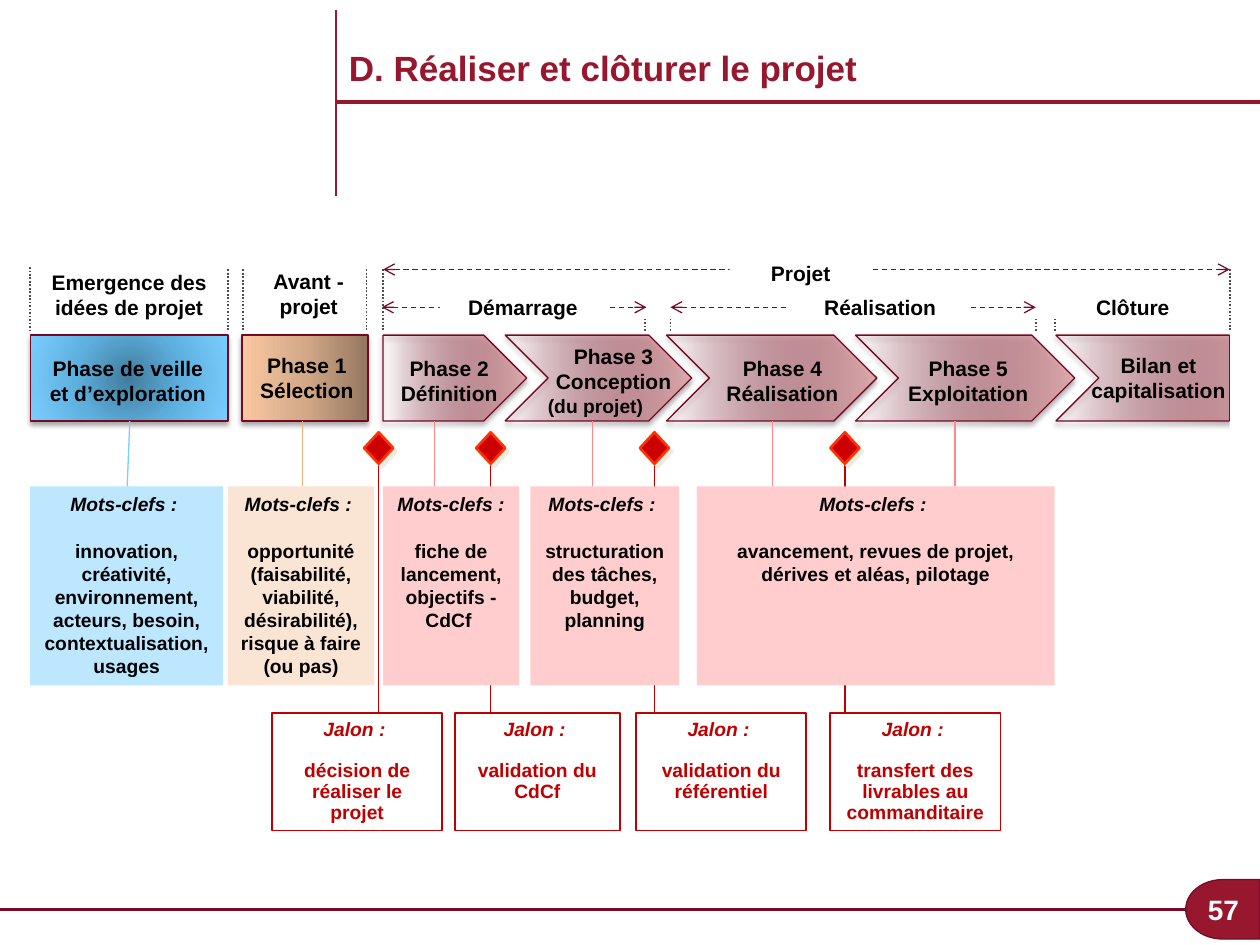
from lxml.etree import SubElement
from pptx import Presentation
from pptx.dml.color import RGBColor
from pptx.enum.dml import MSO_LINE
from pptx.enum.shapes import MSO_CONNECTOR, MSO_SHAPE
from pptx.enum.text import MSO_ANCHOR, PP_ALIGN
from pptx.oxml import parse_xml
from pptx.oxml.ns import nsdecls, qn
from pptx.util import Pt

COLORS = {
    "white": "FFFFFF", "black": "000000", "burgundy": "96172E", "dark": "780B24",
    "outline": "780822", "dots": "4D4D4D", "milestone": "C00000",
    "diamond": "CC0000", "diamond_edge": "FF3300", "diamond_shadow": "EEECE1",
    "blue_card": "BCE7FF", "orange_card": "FAE4D3", "pink_card": "FFCDCD",
    "blue_lead": "7ACEFF", "orange_lead": "EFAE7B", "pink_lead": "FF8989",
}
BLUE = ([(0, "427C9D", 100), (50, "5EB0DF", 100), (100, "7ACEFF", 100)], None)
ORANGE = ([(0, "947760", 100), (50, "D3A988", 100), (100, "FAC8A1", 100)], 180)
PINK = ([(0, "83001E", 0), (100, "DCACAE", 100)], 0)
PHASE_SHADOW = (COLORS["black"], 35, 3.1, 1.8, 90)
DIAMOND_SHADOW = (COLORS["diamond_shadow"], 100, 0, 2.8, 45)


def rgb(name):
    """Return the palette colour called name."""
    return RGBColor.from_string(COLORS[name])


def add_line(slide, start, end, color, width=0.75, dash=None, arrows=False):
    """Draw a straight line, optionally dashed and with arrows at both ends."""
    points = [Pt(value) for value in (*start, *end)]
    connector = slide.shapes.add_connector(MSO_CONNECTOR.STRAIGHT, *points)
    connector.line.color.rgb = rgb(color)
    connector.line.width = Pt(width)
    if dash:
        connector.line.dash_style = dash
    if arrows:
        for tag in ("a:headEnd", "a:tailEnd"):
            SubElement(connector.line._get_or_add_ln(), qn(tag), type="arrow")
    SubElement(connector._element.spPr, qn("a:effectLst"))


def add_box(slide, kind, box, fill=None, line=None, width=0.75):
    """Draw a preset shape without shadow."""
    shape = slide.shapes.add_shape(kind, *[Pt(value) for value in box])
    shape.shadow.inherit = False
    if fill:
        shape.fill.solid()
        shape.fill.fore_color.rgb = rgb(fill)
    else:
        shape.fill.background()
    if line:
        shape.line.color.rgb = rgb(line)
        shape.line.width = Pt(width)
    else:
        shape.line.fill.background()
    return shape


def add_shadow(shape, color, opacity, blur, distance, angle):
    """Give a shape an outer shadow."""
    effects = shape._element.spPr.find(qn("a:effectLst"))
    shadow = SubElement(effects, qn("a:outerShdw"), blurRad=str(Pt(blur)), dist=str(Pt(distance)),
                        dir=str(angle * 60000), algn="ctr", rotWithShape="0")
    tint = SubElement(shadow, qn("a:srgbClr"), val=color)
    SubElement(tint, qn("a:alpha"), val=str(opacity * 1000))


def set_gradient(shape, stops, angle):
    """Fill a shape with a linear gradient, or a circular one if angle is None."""
    stop_xml = "".join(
        f'<a:gs pos="{position * 1000}"><a:srgbClr val="{color}">'
        f'<a:alpha val="{opacity * 1000}"/></a:srgbClr></a:gs>'
        for position, color, opacity in stops)
    if angle is None:
        direction = ('<a:path path="circle"><a:fillToRect l="50000" t="50000" '
                     'r="50000" b="50000"/></a:path>')
    else:
        direction = f'<a:lin ang="{angle * 60000}" scaled="0"/>'
    gradient = parse_xml(f'<a:gradFill {nsdecls("a")} rotWithShape="1"><a:gsLst>{stop_xml}'
                         f'</a:gsLst>{direction}</a:gradFill>')
    properties = shape._element.spPr
    properties.replace(properties.find(qn("a:noFill")), gradient)


def write(shape, paragraphs, size=12, color="black", align=PP_ALIGN.CENTER,
          anchor=MSO_ANCHOR.TOP, wrap=True):
    """Write bold paragraphs in a shape and return them."""
    frame = shape.text_frame
    frame.text = "\n".join(paragraphs)
    frame.word_wrap = wrap
    frame.vertical_anchor = anchor
    for paragraph in frame.paragraphs:
        paragraph.alignment = align
        paragraph.font.name = "Arial"
        paragraph.font.size = Pt(size)
        paragraph.font.bold = True
        paragraph.font.color.rgb = rgb(color)
    return frame.paragraphs


def add_text(slide, box, text, **style):
    """Add a text box holding one paragraph."""
    write(slide.shapes.add_textbox(*[Pt(value) for value in box]), [text], **style)


def write_card(shape, heading, body, color, gap, spacing=None):
    """Write an italic heading and a body paragraph under it."""
    first, second = write(shape, [heading, body], size=11, color=color)
    first.font.italic = True
    second.space_before = Pt(gap)
    if spacing:
        first.line_spacing = second.line_spacing = spacing


def build_header(slide, box):
    """Place the title between its two rules."""
    left, top, width, height = box
    title = slide.shapes.title
    title.left, title.top, title.width, title.height = Pt(left), Pt(top + 16.5), Pt(387.4), Pt(31.7)
    write(title, ["D. Réaliser et clôturer le projet"], size=20, color="burgundy",
          align=PP_ALIGN.LEFT, anchor=MSO_ANCHOR.BOTTOM)
    add_line(slide, (left, top + 52.5), (left + width, top + 52.5), "burgundy", 2.25)
    add_line(slide, (left, top), (left, top + height), "burgundy", 1)


def build_footer(slide, box):
    """Place the bottom rule and the page number badge."""
    left, top, width, height = box
    badge = width - 42.5
    add_line(slide, (left, top + height / 2), (left + badge, top + height / 2), "dark", 2)
    shape = add_box(slide, MSO_SHAPE.FLOWCHART_DELAY, (left + badge, top, 42.5, height),
                    "burgundy", "dark")
    shape.rotation = 180
    add_text(slide, (left + width - 172.8, top + 2.5, 167.8, 28.8), "57", size=16,
             color="white", align=PP_ALIGN.RIGHT, anchor=MSO_ANCHOR.MIDDLE)


def build_spans(slide, box):
    """Place the period labels, their arrows and dotted limits."""
    left, top, width, height = box
    for x, start in [(0, 7.2), (113, 8.6), (121.7, 8.6), (192.2, 8.6), (201.6, 8.6), (351.4, 36.7),
                     (365.8, 36.7), (574.6, 36.7), (585.4, 36.7), (width, 8.6)]:
        add_line(slide, (left + x, top + start), (left + x, top + height), "dots", 1,
                 MSO_LINE.ROUND_DOT)
    for start, end, y in [(201.6, width, 8.6), (200.9, 352.1, 30.2), (365.8, 574.6, 30.2)]:
        add_line(slide, (left + start, top + y), (left + end, top + y), "dark",
                 dash=MSO_LINE.DASH, arrows=True)
    for text, x, y, label_width in [("Projet", 399.6, 0, 81.4), ("Démarrage", 234, 19.4, 95),
                                    ("Réalisation", 434.2, 19.4, 103), ("Clôture", 599.8, 19.4, 60.5)]:
        label = add_box(slide, MSO_SHAPE.RECTANGLE, (left + x, top + y, label_width, 21.6), "white")
        write(label, [text])
    add_text(slide, (left + 4.3, top + 5, 104.4, 36), "Emergence des idées de projet")
    add_text(slide, (left + 129.6, top + 4.3, 59, 36), "Avant - projet")


def build_phases(slide, box):
    """Place the chain of phases, the last one cut straight at the right."""
    left, top, width, height = box
    phases = [
        ("Phase de veille et d’exploration", MSO_SHAPE.RECTANGLE, BLUE, 0, 113, 3.6, 7.9, 104.4),
        ("Phase 1 Sélection", MSO_SHAPE.RECTANGLE, ORANGE, 121, 72, 118.1, 6.5, 79.9),
        ("Phase 2 Définition", MSO_SHAPE.PENTAGON, PINK, 201.6, 82.1, 199.4, 7.9, 79.9),
        ("Phase 3 Conception", MSO_SHAPE.CHEVRON, PINK, 271.4, 106.6, 292.3, 1.4, 82.1),
        ("Phase 4 Réalisation", MSO_SHAPE.CHEVRON, PINK, 363.6, 120.2, 388.8, 7.9, 82.1),
        ("Phase 5 Exploitation", MSO_SHAPE.CHEVRON, PINK, 471.6, 125.3, 490.3, 7.9, 91.4),
        ("Bilan et capitalisation", MSO_SHAPE.CHEVRON, PINK, 586.1, 123.8, 598.7, 6.5, 92),
    ]
    for text, kind, gradient, x, phase_width, text_x, text_y, text_width in phases:
        shape = add_box(slide, kind, (left + x, top, phase_width, height), line="outline")
        set_gradient(shape, *gradient)
        add_shadow(shape, *PHASE_SHADOW)
        add_text(slide, (left + text_x, top + text_y, text_width, 36), text)
    add_text(slide, (left + 288.7, top + 30.2, 69, 21), "(du projet)", size=11,
             align=PP_ALIGN.LEFT, wrap=False)
    add_box(slide, MSO_SHAPE.RECTANGLE, (left + width, top - 1, 17.3, 54), "white")
    add_line(slide, (left + width, top), (left + width, top + height), "dark")


def build_milestones(slide, box):
    """Place the milestone diamonds, their stems and their cards."""
    left, top, width, height = box
    card_top = top + 160.6
    for text, diamond_x, x, card_width in [
            ("décision de réaliser le projet", 52.6, 0, 97.2),
            ("validation du CdCf", 116.6, 104.4, 94.3),
            ("validation du référentiel", 210.2, 208.1, 97.2),
            ("transfert des livrables au commanditaire", 319, 319, 97.2)]:
        center = left + diamond_x + 8.3
        add_line(slide, (center, card_top), (center, top + 18), "milestone")
        diamond = add_box(slide, MSO_SHAPE.DIAMOND, (left + diamond_x, top, 16.6, 18),
                          "diamond", "diamond_edge", 1.5)
        add_shadow(diamond, *DIAMOND_SHADOW)
        card = add_box(slide, MSO_SHAPE.RECTANGLE, (left + x, card_top, card_width, height - 160.6),
                       line="milestone", width=1)
        write_card(card, "Jalon : ", text, "milestone", 11.8, 0.9)


def build_keywords(slide, box):
    """Place the keyword cards and the leads up to their phases."""
    left, top, width, height = box
    lead = 37.4
    for text, hue, x, card_width, leads in [
            ("innovation, créativité, environnement, acteurs, besoin, contextualisation, usages",
             "blue", 0, 110.2, [(55.4, 56.9)]),
            ("opportunité (faisabilité, viabilité, désirabilité), risque à faire (ou pas)",
             "orange", 113, 83.5, [(155.5, 155.5)]),
            ("fiche de lancement, objectifs - CdCf ", "pink", 201.6, 77.8, [(231.1, 231.1)]),
            ("structuration des tâches, budget, planning", "pink", 285.8, 85, [(321.1, 321.1)]),
            ("avancement, revues de projet, dérives et aléas, pilotage", "pink", 380.9, 204.5,
             [(424.1, 424.1), (528.5, 528.5)])]:
        card = add_box(slide, MSO_SHAPE.RECTANGLE,
                       (left + x, top + lead, card_width, height - lead), f"{hue}_card")
        write_card(card, "Mots-clefs : ", text, "black", 13.2)
        for bottom_x, top_x in leads:
            add_line(slide, (left + bottom_x, top + lead), (left + top_x, top), f"{hue}_lead")


def main():
    """Build the slide and save it."""
    presentation = Presentation()
    presentation.slide_width, presentation.slide_height = Pt(720), Pt(540)
    slide = presentation.slides.add_slide(presentation.slide_layouts[5])
    build_footer(slide, (0, 502.6, 720, 34))
    build_milestones(slide, (155.5, 247, 416.2, 227.6))
    build_phases(slide, (17.3, 191.5, 685.4, 49))
    build_spans(slide, (17.3, 145.4, 685.4, 43.9))
    build_keywords(slide, (17.3, 240.5, 585.4, 151.2))
    build_header(slide, (192.2, 5.8, 527.8, 106.5))
    presentation.save("out.pptx")


if __name__ == "__main__":
    main()
